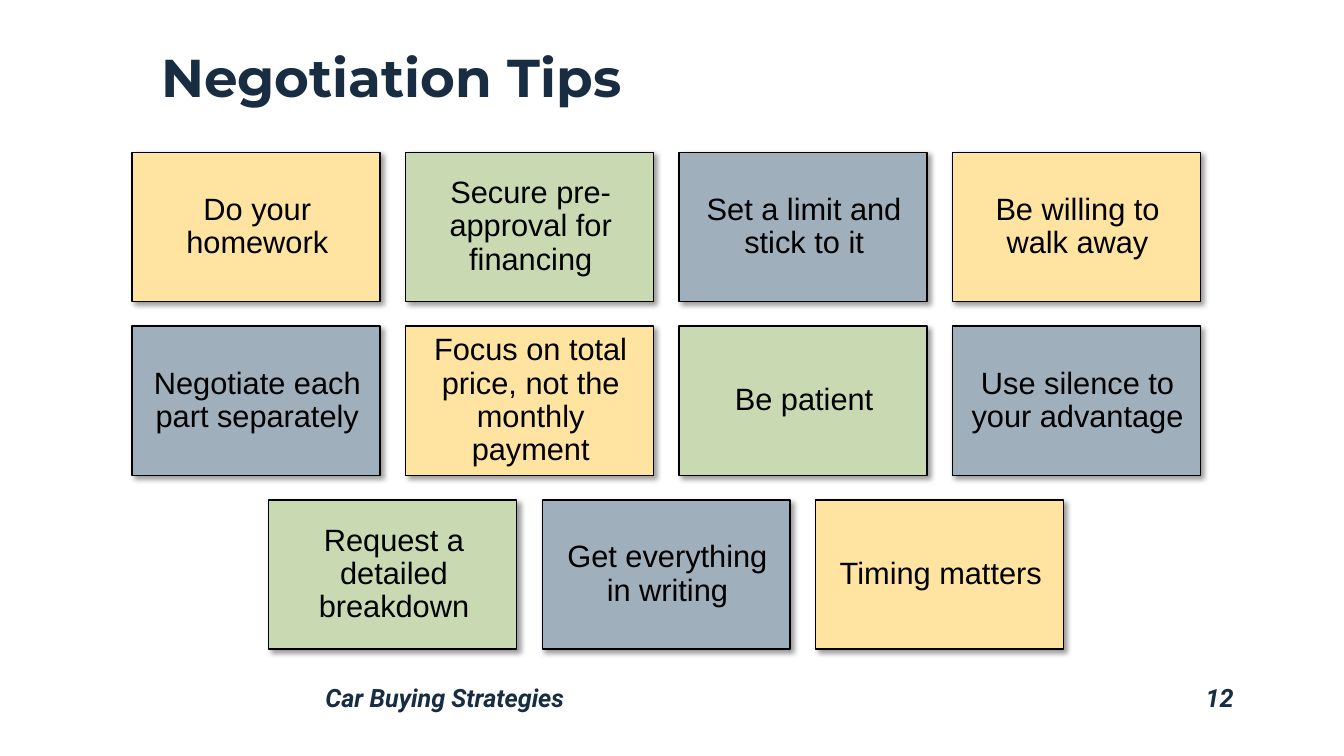
"""Build the Negotiation Tips slide."""
from dataclasses import dataclass

from lxml.etree import SubElement
from pptx import Presentation
from pptx.dml.color import RGBColor
from pptx.enum.shapes import MSO_SHAPE
from pptx.enum.text import MSO_ANCHOR, PP_ALIGN
from pptx.oxml.ns import qn
from pptx.util import Cm, Pt


@dataclass(frozen=True)
class Theme:
    """Hold the colours, fonts and type sizes."""
    navy: str = "182C42"
    black: str = "000000"
    cards: tuple = ("FEE3A1", "C9DAB3", "9FAFBB")
    title_font: str = "Montserrat"
    card_font: str = "Arial"
    footer_font: str = "Roboto"
    title_size: int = 38
    card_size: int = 22
    footer_size: int = 18


THEME = Theme()
CARD_W, CARD_H = 6.25, 3.76
PITCH_X, PITCH_Y = 6.89, 4.38
GRID_LEFT, GRID_TOP = 3.33, 3.84

TIPS = (
    ("Do your homework", "Secure pre-approval for financing",
     "Set a limit and stick to it", "Be willing to walk away"),
    ("Negotiate each part separately",
     "Focus on total price, not the monthly payment",
     "Be patient", "Use silence to your advantage"),
    ("Request a detailed breakdown", "Get everything in writing",
     "Timing matters"),
)


def write_text(tf, text, *, font, size, color, bold=False, italic=False,
               align=PP_ALIGN.LEFT, anchor=MSO_ANCHOR.TOP):
    """Write one formatted paragraph into a text frame."""
    tf.word_wrap = True
    tf.vertical_anchor = anchor
    p = tf.paragraphs[0]
    p.alignment = align
    p.line_spacing = 0.9
    r = p.add_run()
    r.text = text
    r.font.name = font
    r.font.size = Pt(size)
    r.font.bold = bold
    r.font.italic = italic
    r.font.color.rgb = RGBColor.from_string(color)


def add_label(s, box, text, **fmt):
    """Add a text box at left, top, width, height in centimetres."""
    sp = s.shapes.add_textbox(*map(Cm, box))
    write_text(sp.text_frame, text, **fmt)


def add_shadow(sp):
    """Give a shape a soft shadow down and to the right."""
    sp.shadow.inherit = False
    effects = sp._element.spPr.find(qn("a:effectLst"))
    shadow = SubElement(effects, qn("a:outerShdw"), blurRad=str(Pt(4)),
                        dist=str(Pt(3)), dir="2700000", algn="tl",
                        rotWithShape="0")
    color = SubElement(shadow, qn("a:srgbClr"), val=THEME.black)
    SubElement(color, qn("a:alpha"), val="40000")


def add_card(s, left, top, text, fill):
    """Add one tip card with its centred text."""
    sp = s.shapes.add_shape(MSO_SHAPE.RECTANGLE, Cm(left), Cm(top),
                            Cm(CARD_W), Cm(CARD_H))
    sp.fill.solid()
    sp.fill.fore_color.rgb = RGBColor.from_string(fill)
    sp.line.color.rgb = RGBColor.from_string(THEME.black)
    sp.line.width = Pt(1)
    add_shadow(sp)
    tf = sp.text_frame
    tf.margin_left, tf.margin_right = Cm(0.33), Cm(0.27)
    write_text(tf, text, font=THEME.card_font, size=THEME.card_size,
               color=THEME.black, align=PP_ALIGN.CENTER,
               anchor=MSO_ANCHOR.MIDDLE)


def add_cards(s):
    """Lay out the tips in centred rows with colours shifting by row."""
    columns = max(map(len, TIPS))
    for row, tips in enumerate(TIPS):
        left = GRID_LEFT + (columns - len(tips)) * PITCH_X / 2
        for col, tip in enumerate(tips):
            fill = THEME.cards[(col - row) % len(THEME.cards)]
            add_card(s, left + col * PITCH_X, GRID_TOP + row * PITCH_Y,
                     tip, fill)


def main():
    """Build and save the slide."""
    prs = Presentation()
    prs.slide_width, prs.slide_height = Cm(33.87), Cm(19.05)
    s = prs.slides.add_slide(prs.slide_layouts[6])
    add_label(s, (3.81, 0.28, 27.53, 2.59), "Negotiation Tips",
              font=THEME.title_font, size=THEME.title_size,
              color=THEME.navy, bold=True, anchor=MSO_ANCHOR.BOTTOM)
    add_cards(s)
    footer = dict(font=THEME.footer_font, size=THEME.footer_size,
                  color=THEME.navy, bold=True, italic=True)
    add_label(s, (7.95, 17.15, 19.38, 0.97), "Car Buying Strategies", **footer)
    add_label(s, (27.33, 17.15, 4.01, 0.97), "12", align=PP_ALIGN.RIGHT,
              **footer)
    prs.save("out.pptx")


if __name__ == "__main__":
    main()
